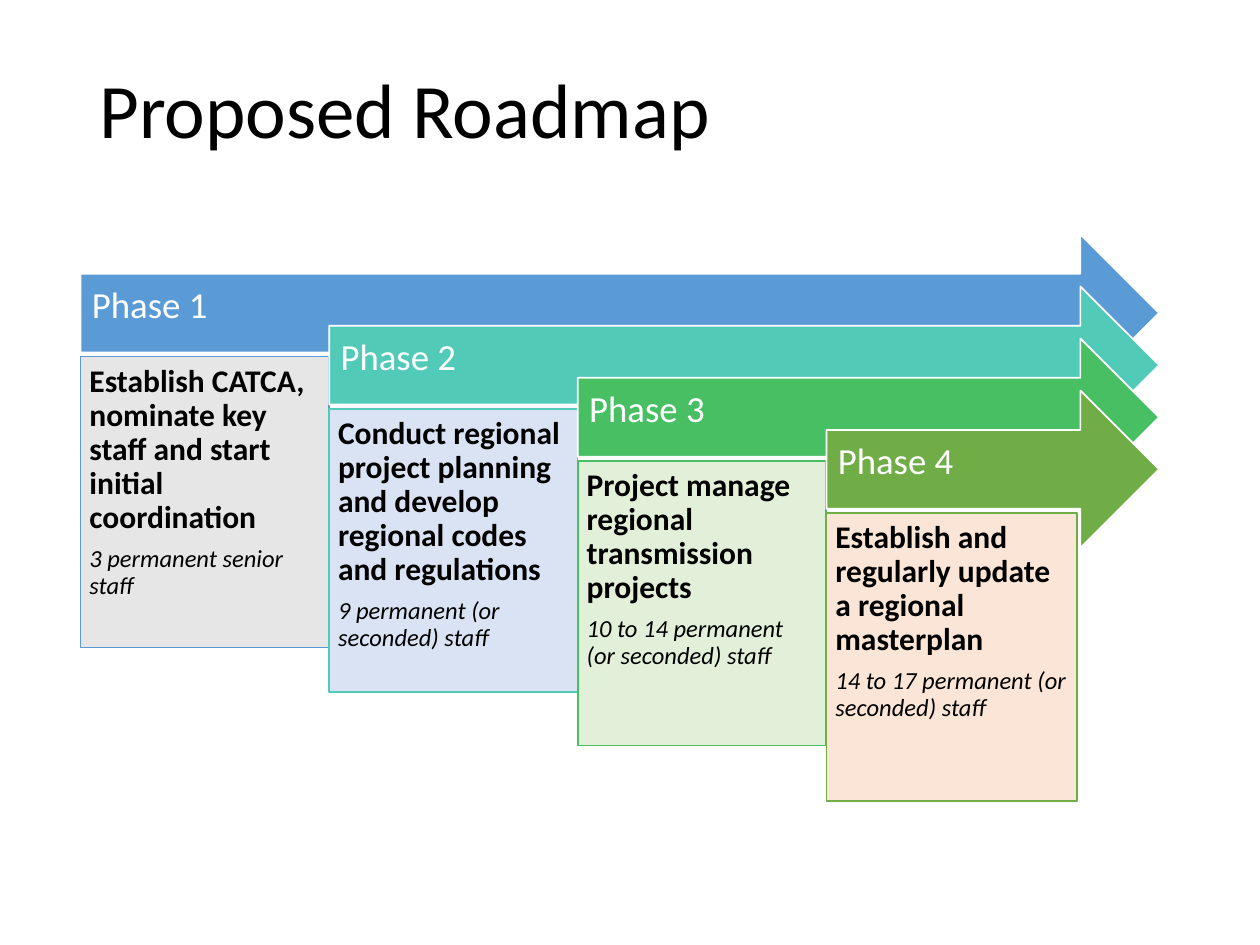
import pptx
import pptx.util
import pptx.dml.color
import pptx.enum.shapes
import pptx.enum.text

Inches, Pt = pptx.util.Inches, pptx.util.Pt
RGB = pptx.dml.color.RGBColor
SHAPE = pptx.enum.shapes.MSO_SHAPE
ANCHOR = pptx.enum.text.MSO_ANCHOR
ALIGN = pptx.enum.text.PP_ALIGN

WHITE = RGB(0xFF, 0xFF, 0xFF)
BLACK = RGB(0x00, 0x00, 0x00)
BLUE, GRAY = RGB(0x5B, 0x9B, 0xD5), RGB(0xE7, 0xE6, 0xE6)
TEAL, PALE = RGB(0x52, 0xCA, 0xB8), RGB(0xDA, 0xE3, 0xF3)
GREEN, MINT = RGB(0x49, 0xBF, 0x64), RGB(0xE2, 0xF0, 0xD9)
OLIVE, PEACH = RGB(0x70, 0xAD, 0x47), RGB(0xFB, 0xE5, 0xD6)

TITLE = "Proposed Roadmap"
# name, goal, staff, arrow colour, box colour, box width, box height
PHASES = [
    ("Phase 1", "Establish CATCA, nominate key staff and start initial coordination",
     "3 permanent senior staff", BLUE, GRAY, 1.97, 2.31),
    ("Phase 2", "Conduct regional project planning and develop regional codes and regulations",
     "9 permanent (or seconded) staff", TEAL, PALE, 1.97, 2.25),
    ("Phase 3", "Project manage regional transmission projects",
     "10 to 14 permanent (or seconded) staff", GREEN, MINT, 1.97, 2.26),
    ("Phase 4", "Establish and regularly update a regional masterplan",
     "14 to 17 permanent (or seconded) staff", OLIVE, PEACH, 1.99, 2.29),
]

LEFT, TOP, RIGHT = 0.64, 1.86, 9.2
LAST_LEFT, LAST_TOP = 6.56, 3.1
STEP_X = (LAST_LEFT - LEFT) / (len(PHASES) - 1)
STEP_Y = (LAST_TOP - TOP) / (len(PHASES) - 1)
ARROW_H, DROP = 1.25, 0.97


def write(para, text, size, color, bold=False, italic=False):
    para.alignment = ALIGN.LEFT
    para.line_spacing = 0.9
    run = para.add_run()
    run.text = text
    font = run.font
    font.name, font.size = "Calibri", Pt(size)
    font.bold, font.italic = bold, italic
    font.color.rgb = color


def add_shape(slide, kind, box, fill, line, anchor, pads):
    """Add a filled shape and return its text frame; pads run left, top, right, bottom."""
    shape = slide.shapes.add_shape(kind, *map(Inches, box))
    shape.shadow.inherit = False
    shape.fill.solid()
    shape.fill.fore_color.rgb = fill
    shape.line.color.rgb = line
    shape.line.width = Pt(1)
    frame = shape.text_frame
    frame.word_wrap = True
    frame.vertical_anchor = anchor
    (frame.margin_left, frame.margin_top,
     frame.margin_right, frame.margin_bottom) = map(Inches, pads)
    return frame


def add_phase(slide, idx, phase):
    name, goal, staff, dark, light, width, height = phase
    x, y = LEFT + idx * STEP_X, TOP + idx * STEP_Y
    frame = add_shape(slide, SHAPE.RIGHT_ARROW, (x, y, RIGHT - x, ARROW_H),
                      dark, WHITE, ANCHOR.MIDDLE, (0.09, 0.09, 0.28, 0.2))
    para = frame.paragraphs[0]
    write(para, name, 21, WHITE)
    para.space_after = Pt(7.35)

    frame = add_shape(slide, SHAPE.RECTANGLE, (x, y + DROP, width, height),
                      light, dark, ANCHOR.TOP, (0.07, 0.07, 0.07, 0.07))
    para = frame.paragraphs[0]
    write(para, goal, 18, BLACK, bold=True)
    para.space_after = Pt(6.3)
    write(frame.add_paragraph(), staff, 14, BLACK, italic=True)


def main():
    prs = pptx.Presentation()
    prs.slide_width, prs.slide_height = Inches(10), Inches(7.5)
    slide = prs.slides.add_slide(prs.slide_layouts[5])

    for idx, phase in enumerate(PHASES):
        add_phase(slide, idx, phase)

    title = slide.shapes.title
    title.left, title.top = Inches(0.69), Inches(0.52)
    title.width, title.height = Inches(8.62), Inches(0.94)
    title.text_frame.vertical_anchor = ANCHOR.TOP
    write(title.text_frame.paragraphs[0], TITLE, 44, BLACK)

    prs.save("out.pptx")


if __name__ == "__main__":
    main()
